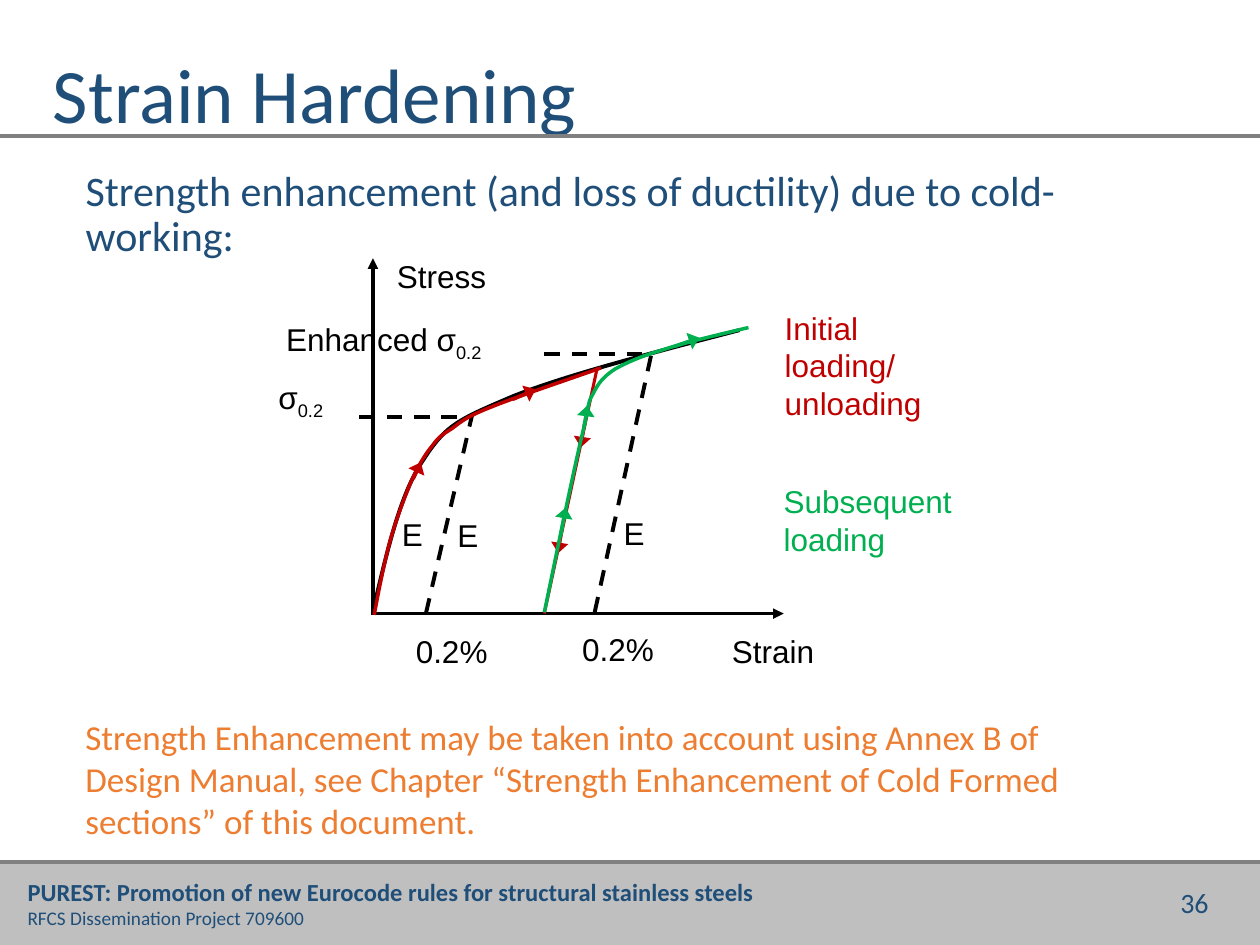
from lxml import etree
from pptx import Presentation
from pptx.dml.color import RGBColor
from pptx.enum.dml import MSO_LINE
from pptx.enum.shapes import MSO_CONNECTOR, MSO_SHAPE
from pptx.enum.text import MSO_ANCHOR, MSO_AUTO_SIZE, PP_ALIGN
from pptx.oxml.ns import qn
from pptx.util import Inches, Pt

STRAIGHT = MSO_CONNECTOR.STRAIGHT
RECTANGLE = MSO_SHAPE.RECTANGLE
DASH = MSO_LINE.DASH
TOP = MSO_ANCHOR.TOP
NO_AUTOFIT = MSO_AUTO_SIZE.NONE
LEFT, RIGHT = PP_ALIGN.LEFT, PP_ALIGN.RIGHT

COLORS = {
    "navy": "1F4E79", "black": "000000", "white": "FFFFFF", "band": "BFBFBF",
    "rule": "808080", "initial": "C00000", "subsequent": "00B050", "note": "ED7D31",
}

# Curves: a start point, then Bezier segments of two controls and an end
MATERIAL_CURVE = [
    (2.96, 4.85), (3.07, 4.39), (3.17, 3.93), (3.36, 3.65),
    (3.54, 3.37), (3.64, 3.33), (4.06, 3.15),
    (4.48, 2.98), (5.18, 2.8), (5.87, 2.62),
]
INITIAL_CURVE = [
    (2.97, 4.88), (3.01, 4.67), (3.05, 4.46), (3.1, 4.28),
    (3.15, 4.11), (3.21, 3.95), (3.26, 3.83),
    (3.32, 3.7), (3.37, 3.61), (3.43, 3.54),
    (3.48, 3.47), (3.51, 3.45), (3.59, 3.4),
    (3.67, 3.34), (3.7, 3.31), (3.9, 3.23),
    (4.1, 3.15), (4.43, 3.04), (4.77, 2.92),
]
SUBSEQUENT_CURVE = [
    (4.32, 4.86), (4.44, 4.28), (4.56, 3.7), (4.63, 3.41),
    (4.69, 3.12), (4.67, 3.2), (4.71, 3.12),
    (4.75, 3.04), (4.79, 2.99), (4.88, 2.93),
    (4.97, 2.88), (5.08, 2.83), (5.25, 2.78),
    (5.43, 2.72), (5.69, 2.66), (5.94, 2.6),
]


def rgb(name):
    return RGBColor.from_string(COLORS[name])


def style_font(span, size, color, font="Calibri", bold=False):
    span.font.size = Pt(size)
    span.font.name = font
    span.font.bold = bold
    span.font.color.rgb = rgb(color)


def place(shape, left, top, width, height):
    shape.left, shape.top = Inches(left), Inches(top)
    shape.width, shape.height = Inches(width), Inches(height)


def fill_placeholder(holder, text, size, position):
    place(holder, *position)
    frame = holder.text_frame
    frame.text = text
    frame.auto_size = NO_AUTOFIT
    frame.vertical_anchor = TOP
    para = frame.paragraphs[0]
    para.alignment = LEFT
    para.line_spacing = 0.9
    style_font(para.runs[0], size, "navy")
    return para


def remove_bullet(para):
    properties = para._p.get_or_add_pPr()
    properties.set("marL", "0")
    properties.set("indent", "0")
    etree.SubElement(properties, qn("a:buNone"))


def add_text(page, text, position, size, color, font="Calibri", align=LEFT):
    box = page.shapes.add_textbox(*(Inches(value) for value in position))
    frame = box.text_frame
    frame.word_wrap = True
    frame.text = text
    para = frame.paragraphs[0]
    para.alignment = align
    style_font(para.runs[0], size, color, font)
    return box


def add_label(page, text, left, top, width=0.94, height=0.47, subscript="",
              inset=0, opaque=False):
    box = add_text(page, text, (left, top, width, height), 18, "black", "Arial")
    box.text_frame.margin_left = box.text_frame.margin_right = Inches(inset)
    if opaque:
        box.fill.solid()
        box.fill.fore_color.rgb = rgb("white")
    if subscript:
        span = box.text_frame.paragraphs[0].add_run()
        span.text = subscript
        style_font(span, 18, "black", "Arial")
        span._r.get_or_add_rPr().set("baseline", "-25000")


def add_line(page, start, end, color="black", width=2, dashed=False, arrow=None):
    """Draw a line; arrow is the width of its head, "med" or "lg"."""
    ends = (Inches(value) for value in (*start, *end))
    line = page.shapes.add_connector(STRAIGHT, *ends)
    line.line.color.rgb = rgb(color)
    line.line.width = Pt(width)
    if dashed:
        line.line.dash_style = DASH
    if arrow:
        outline = line.line._get_or_add_ln()
        etree.SubElement(outline, qn("a:tailEnd"), type="triangle", w=arrow)
    etree.SubElement(line._element.spPr, qn("a:effectLst"))


def add_curve(page, points, color, width, fill=None):
    start, *rest = [tuple(Inches(value) for value in point) for point in points]
    builder = page.shapes.build_freeform(*start)
    builder.add_line_segments(rest, close=False)
    curve = builder.convert_to_shape()
    # Merge each three straight steps into one Bezier segment
    steps = list(curve._element.iter(qn("a:lnTo")))
    outline = steps[0].getparent()
    for first in range(0, len(steps), 3):
        segment = etree.SubElement(outline, qn("a:cubicBezTo"))
        for step in steps[first:first + 3]:
            segment.append(step[0])
            outline.remove(step)
    curve.shadow.inherit = False
    if fill:
        curve.fill.solid()
        curve.fill.fore_color.rgb = rgb(fill)
    else:
        curve.fill.background()
    curve.line.color.rgb = rgb(color)
    curve.line.width = Pt(width)


def add_footer(page):
    band = page.shapes.add_shape(
        RECTANGLE, Inches(0), Inches(6.84), Inches(10), Inches(0.66))
    band.shadow.inherit = False
    band.fill.solid()
    band.fill.fore_color.rgb = rgb("band")
    band.line.color.rgb = rgb("band")
    band.line.width = Pt(1)
    add_line(page, (0, 6.84), (10, 6.84), "rule")
    project = add_text(
        page, "PUREST: Promotion of new Eurocode rules for structural stainless steels",
        (0.12, 6.91, 6.01, 0.52), 14, "navy")
    project.text_frame.word_wrap = False
    project.text_frame.paragraphs[0].runs[0].font.bold = True
    para = project.text_frame.add_paragraph()
    para.text = "RFCS Dissemination Project 709600"
    style_font(para.runs[0], 11, "navy")
    add_text(page, "36", (7.44, 6.98, 2.25, 0.4), 16, "navy", align=RIGHT)


def add_diagram(page):
    # Material curve and axes
    add_curve(page, MATERIAL_CURVE, "black", 2.25, "white")
    add_label(page, "E", 3.19, 4.04, 0.36, opaque=True)
    add_line(page, (2.97, 4.87), (6.22, 4.87), arrow="med")
    add_line(page, (2.96, 4.88), (2.96, 2.05), arrow="med")
    add_label(page, "Strain", 5.71, 4.97, 0.98, 0.35, inset=0.1, opaque=True)
    add_label(page, "Stress", 3.15, 1.99, opaque=True)

    # Proof strengths and their 0.2% offsets
    for start, end in (((2.85, 3.31), (3.71, 3.31)), ((4.32, 2.81), (5.15, 2.81)),
                       ((4.72, 4.86), (5.17, 2.81)), ((3.38, 4.87), (3.75, 3.28))):
        add_line(page, start, end, width=2.25, dashed=True)
    add_label(page, "σ", 2.21, 2.95, subscript="0.2")
    add_label(page, "Enhanced σ", 2.27, 2.49, 2.18, subscript="0.2")
    for left, top in ((4.95, 4.03), (3.63, 4.05)):
        add_label(page, "E", left, top, 0.36)
    for left, top in ((4.62, 4.95), (3.3, 4.97)):
        add_label(page, "0.2%", left, top, 1.06)

    # Unloading
    add_line(page, (4.74, 2.92), (4.32, 4.87), "initial", 1.75)
    for start, end in (((4.64, 3.35), (4.61, 3.55)), ((4.46, 4.19), (4.43, 4.39))):
        add_line(page, start, end, "initial", 1.75, arrow="lg")

    # Subsequent loading
    add_curve(page, SUBSEQUENT_CURVE, "subsequent", 2)
    for start, end in (((5.35, 2.75), (5.55, 2.68)), ((4.64, 3.38), (4.66, 3.22)),
                       ((4.45, 4.25), (4.49, 4.03))):
        add_line(page, start, end, "subsequent", arrow="lg")

    # Initial loading
    for start, end in (((4.07, 3.17), (4.25, 3.09)), ((3.28, 3.8), (3.34, 3.67))):
        add_line(page, start, end, "initial", arrow="lg")
    add_curve(page, INITIAL_CURVE, "initial", 2)

    # Legend
    add_text(page, "Initial loading/ unloading", (6.13, 2.4, 1.54, 1.01),
             18, "initial", "Arial")
    add_text(page, "Subsequent loading", (6.12, 3.78, 1.91, 0.71),
             18, "subsequent", "Arial")


def main():
    deck = Presentation()
    deck.slide_width, deck.slide_height = Inches(10), Inches(7.5)
    page = deck.slides.add_slide(deck.slide_layouts[1])
    add_footer(page)
    add_line(page, (0, 1.08), (10, 1.08), "rule")
    fill_placeholder(page.shapes.title, "Strain Hardening", 44, (0.32, 0.4, 9.35, 0.68))
    lead = fill_placeholder(
        page.placeholders[1],
        "Strength enhancement (and loss of ductility) due to cold-working:",
        24, (0.58, 1.3, 8.85, 5.34))
    remove_bullet(lead)
    add_diagram(page)
    add_text(page, "Strength Enhancement may be taken into account using Annex B of "
             "Design Manual, see Chapter “Strength Enhancement of Cold Formed "
             "sections” of this document.", (0.58, 5.63, 8.53, 1.11), 20, "note")
    deck.save("out.pptx")


if __name__ == "__main__":
    main()
